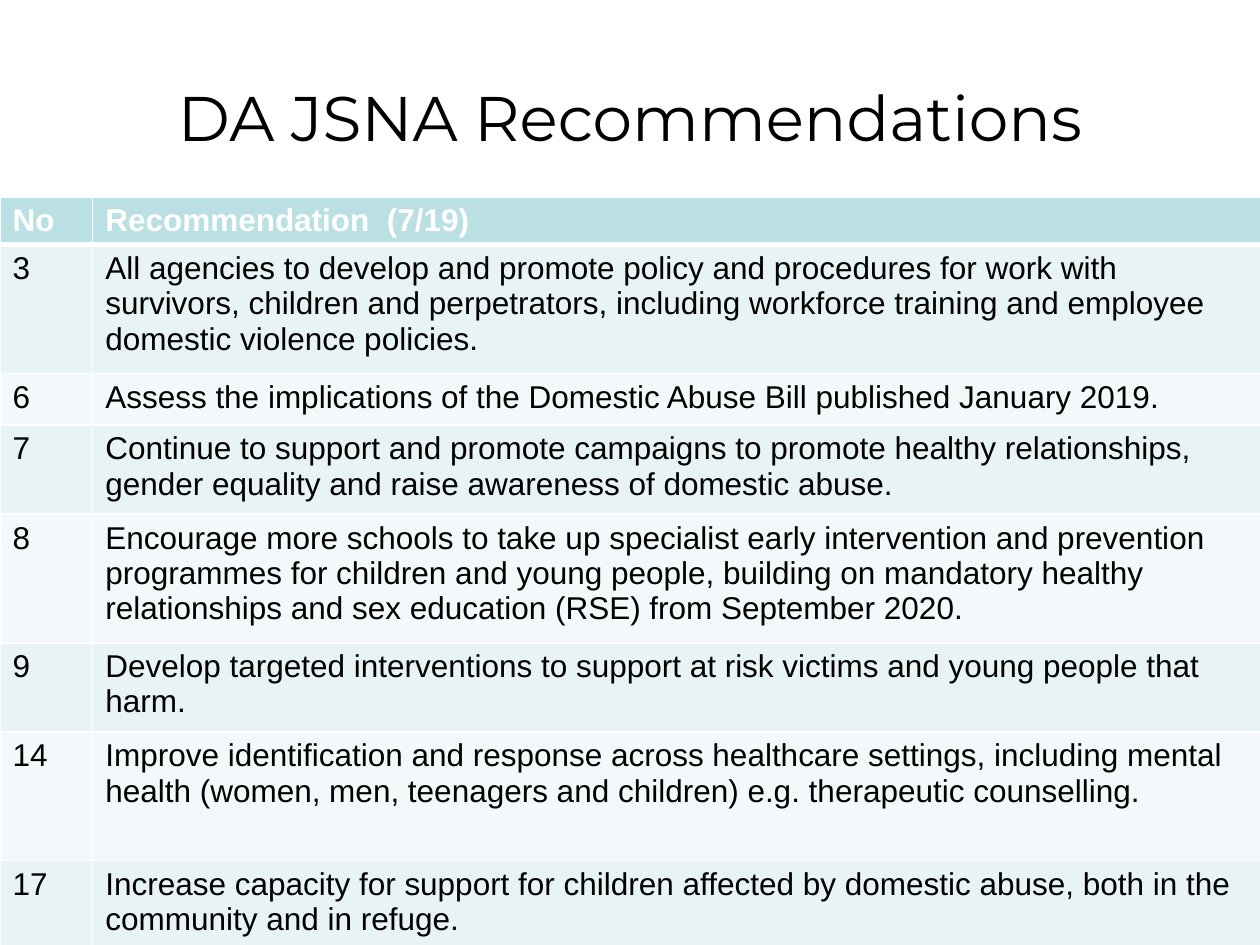
from lxml.etree import SubElement
from pptx import Presentation
from pptx.dml.color import RGBColor as Color
from pptx.enum.text import MSO_ANCHOR as Anchor, PP_ALIGN as Align
from pptx.oxml.ns import qn
from pptx.util import Pt

TITLE = "DA JSNA Recommendations"
HEADER = ("No", "Recommendation  (7/19)")
RECOMMENDATIONS = [
    ("3", "All agencies to develop and promote policy and procedures for work with survivors, children and perpetrators, including workforce training and employee domestic violence policies."),
    ("6", "Assess the implications of the Domestic Abuse Bill published January 2019."),
    ("7", "Continue to support and promote campaigns to promote healthy relationships, gender equality and raise awareness of domestic abuse."),
    ("8", "Encourage more schools to take up specialist early intervention and prevention programmes for children and young people, building on mandatory healthy relationships and sex education (RSE) from September 2020."),
    ("9", "Develop targeted interventions to support at risk victims and young people that harm."),
    ("14", "Improve identification and response across healthcare settings, including mental health (women, men, teenagers and children) e.g. therapeutic counselling."),
    ("17", "Increase capacity for support for children affected by domestic abuse, both in the community and in refuge."),
]
COLUMN_WIDTHS = (53, 672)
HEADER_HEIGHT = 23
ROW_HEIGHTS = {1: 29.5, 2: 51, 3: 73.5}
ROW_LINES = (3, 1, 2, 3, 2, 3, 2)

THEME = {
    "title": {"name": "Montserrat", "size": Pt(36), "bold": False, "color": "000000"},
    "header": {"name": "Arial", "size": Pt(18), "bold": True, "color": "FFFFFF"},
    "body": {"name": "Arial", "size": Pt(18), "bold": False, "color": "000000"},
    "header_fill": "BBE0E3",
    "row_fills": ("E7F3F4", "F3F9FA"),
    "border": "FFFFFF",
}


def format_font(font, style):
    for name, value in style.items():
        if name == "color":
            font.color.rgb = Color.from_string(value)
        else:
            setattr(font, name, value)


def add_border(cell, side, width):
    properties = cell._tc.get_or_add_tcPr()
    line = SubElement(properties, qn(f"a:ln{side}"), w=str(Pt(width)))
    fill = SubElement(line, qn("a:solidFill"))
    SubElement(fill, qn("a:srgbClr"), val=THEME["border"])


def fill_cell(cell, text, style, fill, borders):
    cell.text = text
    format_font(cell.text_frame.paragraphs[0].runs[0].font, style)
    for side, width in borders.items():
        add_border(cell, side, width)
    cell.fill.solid()
    cell.fill.fore_color.rgb = Color.from_string(fill)


def add_title(slide):
    title = slide.shapes.title
    placement = {"left": 36, "top": 21.6, "width": 648, "height": 90}
    for name, value in placement.items():
        setattr(title, name, Pt(value))
    title.text_frame.text = TITLE
    title.text_frame.vertical_anchor = Anchor.MIDDLE
    paragraph = title.text_frame.paragraphs[0]
    paragraph.alignment = Align.CENTER
    format_font(paragraph.runs[0].font, THEME["title"])


def add_recommendations(slide):
    rows = [HEADER, *RECOMMENDATIONS]
    heights = [HEADER_HEIGHT, *(ROW_HEIGHTS[lines] for lines in ROW_LINES)]
    table = slide.shapes.add_table(
        len(rows), len(COLUMN_WIDTHS), Pt(0), Pt(112.5),
        Pt(sum(COLUMN_WIDTHS)), Pt(sum(heights)),
    ).table
    for column, width in zip(table.columns, COLUMN_WIDTHS):
        column.width = Pt(width)
    for index, (texts, height) in enumerate(zip(rows, heights)):
        table.rows[index].height = Pt(height)
        is_header = index == 0
        style = THEME["header" if is_header else "body"]
        fill = THEME["header_fill"] if is_header else THEME["row_fills"][(index - 1) % 2]
        borders = {"L": 1, "R": 1, "T": 3 if index == 1 else 1, "B": 3 if is_header else 1}
        for cell, text in zip(table.rows[index].cells, texts):
            fill_cell(cell, text, style, fill, borders)


def main():
    presentation = Presentation()
    presentation.slide_width, presentation.slide_height = Pt(720), Pt(540)
    slide = presentation.slides.add_slide(presentation.slide_layouts[5])
    add_title(slide)
    add_recommendations(slide)
    presentation.save("out.pptx")


if __name__ == "__main__":
    main()
